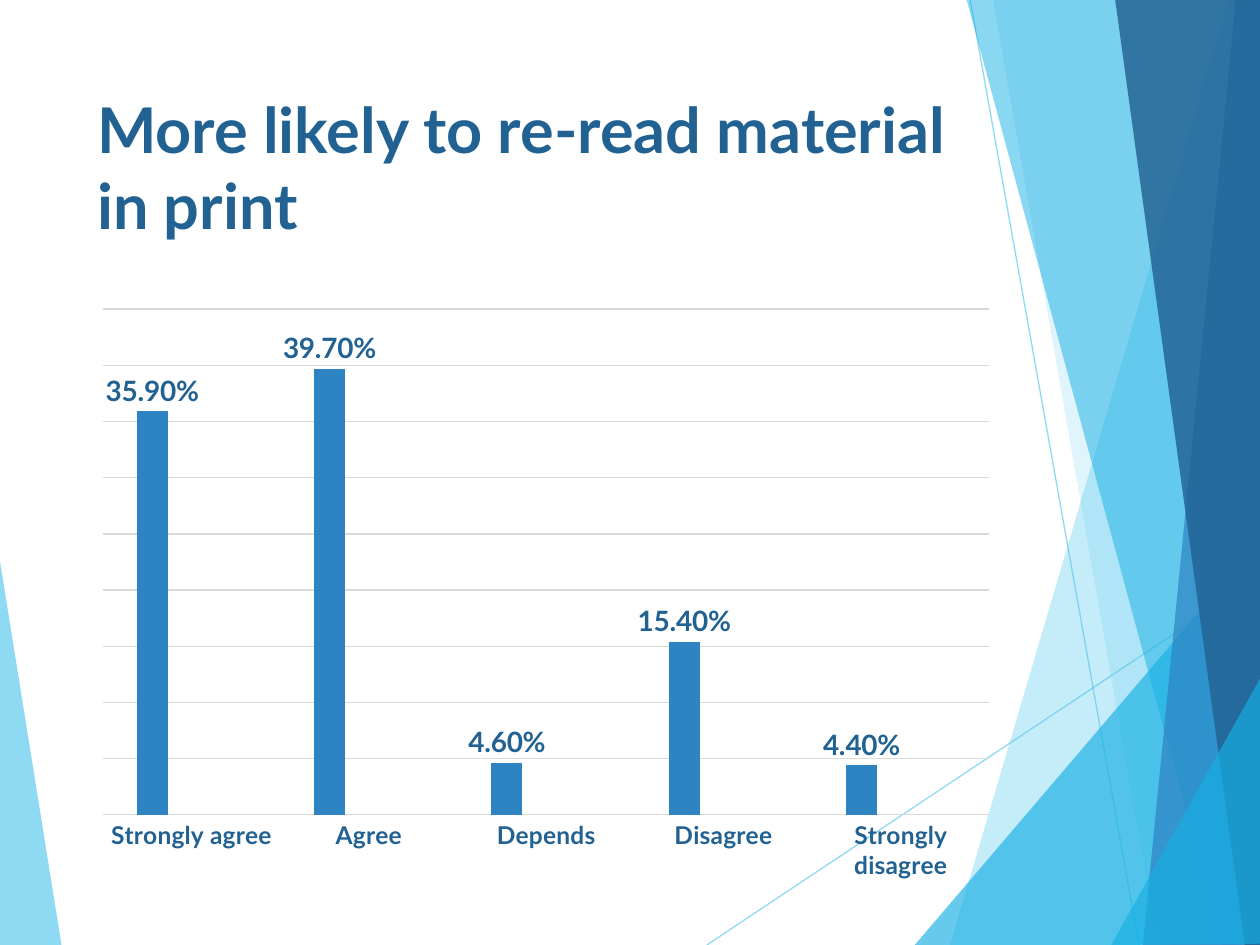
from lxml import etree
from pptx import Presentation
from pptx import util as u
from pptx.chart.data import CategoryChartData
from pptx.dml.color import RGBColor
from pptx.enum import chart as ch, shapes, text
from pptx.oxml.ns import qn

HUES = {"sky": "5FCBEF", "aqua": "17B0E4", "blue": "2E83C3", "navy": "226292",
        "green": "2E946B", "lime": "96D141", "grid": "D9D9D9"}
FONT = "Lato"
TITLE = "More likely to re-read material in print"
CATS = ["Strongly agree", "Agree", "Depends", "Disagree", "Strongly disagree"]
SERIES = [("Series 1", "blue", [0.359, 0.397, 0.046, 0.154, 0.044]),
          ("Series 2", "green", [None] * 5),
          ("Series 3", "lime", [None] * 5)]
WEDGE = ("sky", 70, [(-0.01, 4.39), (0.49, 7.51), (-0.01, 7.5)])
RAYS = [((5.61, 7.5), (10.01, 4.57)), ((7.7, 0), (9.04, 7.5))]
SHARDS = [
    ("sky", 36, [(9.75, 0), (7.54, 7.5), (10.02, 7.51), (10.01, 0.01)]),
    ("sky", 20, [(7.88, -0.01), (9.19, 7.5), (10.01, 7.5), (10.01, -0.01)]),
    ("aqua", 66, [(7.26, 7.5), (10, 4.29), (10.01, 7.5)]),
    ("aqua", 50, [(7.67, -0.01), (9.7, 7.5), (10.01, 7.49), (10.01, -0.01)]),
    ("blue", 70, [(9.81, -0.01), (9.07, 7.5), (10.01, 7.5), (10, -0.01)]),
    ("navy", 82, [(8.85, -0.01), (9.88, 7.5), (10.02, 7.5), (10, -0.01)]),
    ("aqua", 66, [(8.82, 7.5), (10.02, 5.35), (10.02, 7.49)]),
]


def size(*vals):
    return [u.Cm(v * 2.54) for v in vals]


def tint(fill, hue, alpha=100):
    fill.solid()
    fill.fore_color.rgb = RGBColor.from_string(HUES[hue])
    if alpha < 100:
        node = fill._xPr.find(".//" + qn("a:srgbClr"))
        etree.SubElement(node, qn("a:alpha"), val=str(alpha * 1000))


def style(font, pts):
    font.name, font.size, font.bold = FONT, u.Pt(pts), True
    font.color.rgb = RGBColor.from_string(HUES["navy"])


def rule(line):
    tint(line.fill, "grid")
    line.width = u.Pt(0.75)


def add_shard(slide, hue, alpha, spots):
    first, *rest = [size(*spot) for spot in spots]
    pen = slide.shapes.build_freeform(*first)
    pen.add_line_segments(rest, close=True)
    shard = pen.convert_to_shape()
    shard.shadow.inherit = False
    shard.line.fill.background()
    tint(shard.fill, hue, alpha)


def add_ray(slide, start, end):
    ray = slide.shapes.add_connector(shapes.MSO_CONNECTOR.STRAIGHT, *size(*start, *end))
    ray.line.width = u.Pt(0.75)
    tint(ray.line.fill, "sky", 70)
    etree.SubElement(ray._element.spPr, qn("a:effectLst"))


def add_title(slide):
    title = slide.shapes.title
    slide.shapes._spTree.append(title._element)
    title.left, title.top, title.width, title.height = size(0.67, 0.67, 6.94, 1.44)
    frame = title.text_frame
    frame.word_wrap = True
    frame.auto_size = text.MSO_AUTO_SIZE.NONE
    frame.vertical_anchor = text.MSO_ANCHOR.TOP
    para = frame.paragraphs[0]
    para.alignment = text.PP_ALIGN.LEFT
    para.line_spacing = 1.0
    run = para.add_run()
    run.text = TITLE
    style(run.font, 36)


def add_bars(slide):
    data = CategoryChartData(number_format="0.00%")
    data.categories = CATS
    for name, _, vals in SERIES:
        data.add_series(name, vals)
    kind = ch.XL_CHART_TYPE.COLUMN_CLUSTERED
    chart = slide.shapes.add_chart(kind, *size(0.67, 2.36, 7.33, 4.72), data).chart
    chart.has_title = chart.has_legend = False
    chart.font.name, chart.font.size = FONT, u.Pt(10)
    plot = chart.plots[0]
    plot.gap_width, plot.overlap, plot.vary_by_categories = 219, -27, False
    for bars, (_, hue, _) in zip(plot.series, SERIES):
        tint(bars.format.fill, hue)
    tags = plot.series[0].data_labels
    tags.show_value = True
    tags.position = ch.XL_LABEL_POSITION.OUTSIDE_END
    tags.number_format, tags.number_format_is_linked = "0.00%", False
    style(tags.font, 16)
    base, scale = chart.category_axis, chart.value_axis
    base.major_tick_mark = ch.XL_TICK_MARK.NONE
    rule(base.format.line)
    style(base.tick_labels.font, 14)
    scale.minimum_scale, scale.maximum_scale, scale.major_unit = 0, 0.45, 0.05
    scale.has_major_gridlines = True
    rule(scale.major_gridlines.format.line)
    scale.visible = False


def main():
    deck = Presentation()
    deck.slide_width, deck.slide_height = size(10, 7.5)
    slide = deck.slides.add_slide(deck.slide_layouts[5])
    add_shard(slide, *WEDGE)
    for ray in RAYS:
        add_ray(slide, *ray)
    for shard in SHARDS:
        add_shard(slide, *shard)
    add_title(slide)
    add_bars(slide)
    deck.save("out.pptx")


if __name__ == "__main__":
    main()
